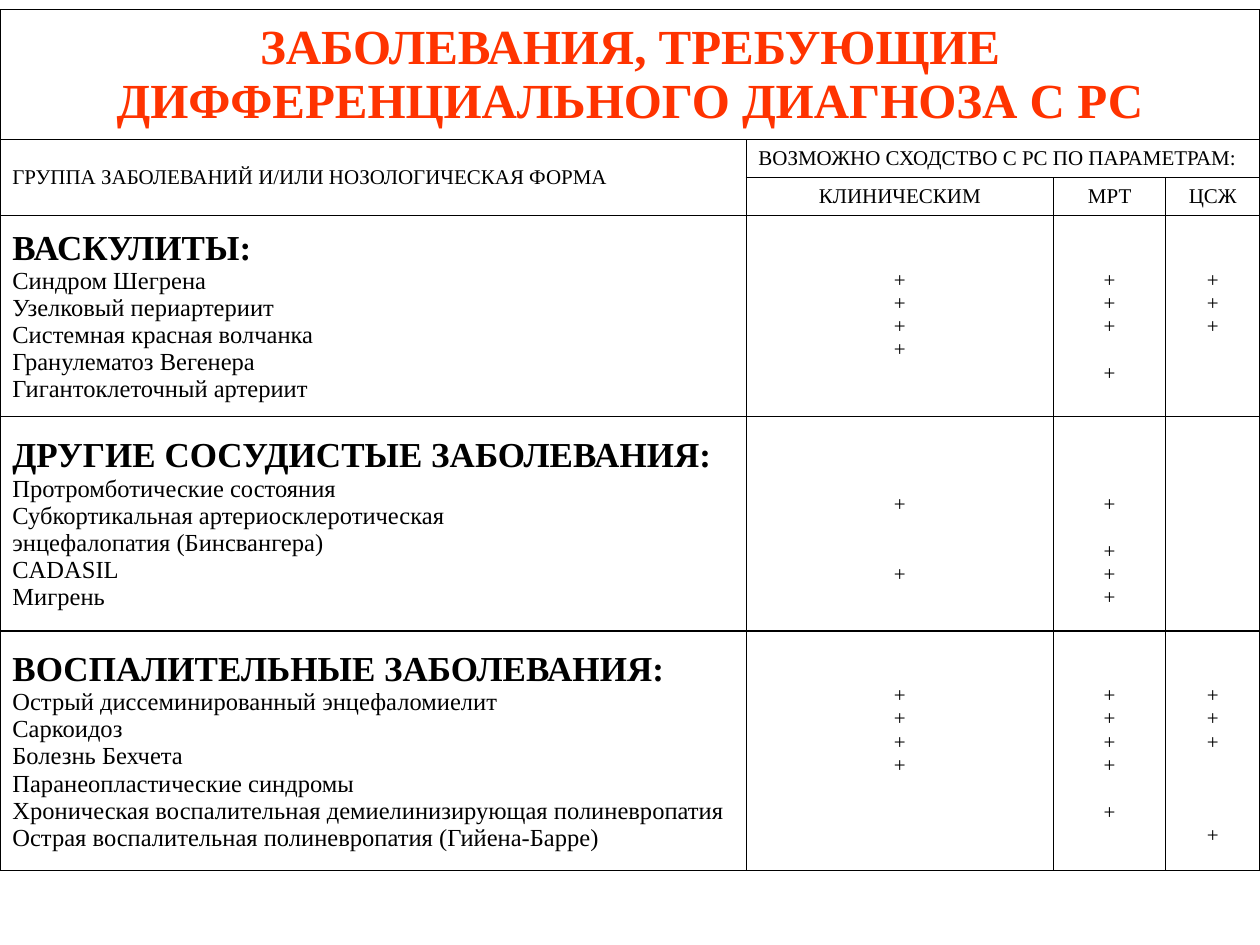
from dataclasses import dataclass

from lxml import etree
from pptx import Presentation
from pptx.dml.color import RGBColor
from pptx.enum.text import MSO_ANCHOR, PP_ALIGN
from pptx.oxml.ns import qn
from pptx.util import Cm, Pt

LEFT, CENTER = PP_ALIGN.LEFT, PP_ALIGN.CENTER
TOP, MIDDLE = MSO_ANCHOR.TOP, MSO_ANCHOR.MIDDLE


@dataclass(frozen=True)
class Theme:
    font: str = "Times New Roman"
    ink: str = "000000"
    accent: str = "FF3300"
    title: int = 28
    group: int = 20
    disease: int = 14
    small: int = 12
    border: float = 0.75
    inset_x: float = 0.25
    inset_y: float = 0.13
    mark_line: float = 0.47


THEME = Theme()
COLUMNS = [15.04, 6.2, 2.26, 1.9]
HEADER_ROWS = [2.62, 0.76, 0.76]
PARAMETERS = ["КЛИНИЧЕСКИМ", "МРТ", "ЦСЖ"]
# In each mark pattern a dot is an empty line.
GROUPS = [
    {
        "name": "ВАСКУЛИТЫ:",
        "diseases": [
            "Синдром Шегрена",
            "Узелковый периартериит",
            "Системная красная волчанка",
            "Гранулематоз Вегенера",
            "Гигантоклеточный артериит",
        ],
        "marks": ["++++", "+++.+", "+++"],
        "lead": 2,
        "height": 4.06,
    },
    {
        "name": "ДРУГИЕ СОСУДИСТЫЕ ЗАБОЛЕВАНИЯ:",
        "diseases": [
            "Протромботические состояния",
            "Субкортикальная артериосклеротическая",
            "энцефалопатия (Бинсвангера)",
            "CADASIL",
            "Мигрень",
        ],
        "marks": ["+..+", "+.+++", ""],
        "lead": 3,
        "height": 4.32,
    },
    {
        "name": "ВОСПАЛИТЕЛЬНЫЕ ЗАБОЛЕВАНИЯ:",
        "diseases": [
            "Острый диссеминированный энцефаломиелит",
            "Саркоидоз",
            "Болезнь Бехчета",
            "Паранеопластические синдромы",
            "Хроническая воспалительная демиелинизирующая полиневропатия",
            "Острая воспалительная полиневропатия (Гийена-Барре)",
        ],
        "marks": ["++++", "++++.+", "+++...+"],
        "lead": 2,
        "height": 4.83,
    },
]


def write(cell, text, size=THEME.small, color=THEME.ink, bold=False, align=LEFT, before=0):
    frame = cell.text_frame
    paragraph = frame.add_paragraph() if frame.text else frame.paragraphs[0]
    paragraph.alignment = align
    if before:
        paragraph.space_before = Cm(before)
    run = paragraph.add_run()
    run.text = text
    run.font.name = THEME.font
    run.font.size = Pt(size)
    run.font.bold = bold
    run.font.color.rgb = RGBColor.from_string(color)


def style_cell(cell):
    properties = cell._tc.get_or_add_tcPr()
    for side in ("lnL", "lnR", "lnT", "lnB"):
        line = etree.SubElement(properties, qn(f"a:{side}"), w=str(Pt(THEME.border)))
        fill = etree.SubElement(line, qn("a:solidFill"))
        etree.SubElement(fill, qn("a:srgbClr"), val=THEME.ink)
    cell.fill.background()
    cell.margin_left = cell.margin_right = Cm(THEME.inset_x)
    cell.margin_top = cell.margin_bottom = Cm(THEME.inset_y)
    cell.vertical_anchor = MIDDLE


def add_grid(slide, left, top, widths, heights):
    frame = slide.shapes.add_table(
        len(heights), len(widths), Cm(left), Cm(top), Cm(sum(widths)), Cm(sum(heights))
    )
    table = frame.table
    table.first_row = table.horz_banding = False
    for column, width in zip(table.columns, widths):
        column.width = Cm(width)
    for row, height in zip(table.rows, heights):
        row.height = Cm(height)
    for cell in table.iter_cells():
        style_cell(cell)
    return table


def fill_header(table):
    title, form, similarity = table.cell(0, 0), table.cell(1, 0), table.cell(1, 1)
    title.merge(table.cell(0, 3))
    form.merge(table.cell(2, 0))
    similarity.merge(table.cell(1, 3))
    write(title, "ЗАБОЛЕВАНИЯ, ТРЕБУЮЩИЕ ДИФФЕРЕНЦИАЛЬНОГО ДИАГНОЗА С РС",
          size=THEME.title, color=THEME.accent, bold=True, align=CENTER)
    write(form, "ГРУППА ЗАБОЛЕВАНИЙ И/ИЛИ НОЗОЛОГИЧЕСКАЯ ФОРМА")
    write(similarity, "ВОЗМОЖНО СХОДСТВО С PC ПО ПАРАМЕТРАМ:")
    for column, parameter in enumerate(PARAMETERS, start=1):
        write(table.cell(2, column), parameter, align=CENTER)


def fill_marks(cell, pattern, lead):
    cell.vertical_anchor = TOP
    cell.margin_top = Cm(THEME.inset_y + lead * THEME.mark_line)
    gap = 0
    for symbol in pattern:
        if symbol == "+":
            write(cell, symbol, align=CENTER, before=gap * THEME.mark_line)
            gap = 0
        else:
            gap += 1


def fill_group(table, row, group):
    diseases = table.cell(row, 0)
    write(diseases, group["name"], size=THEME.group, bold=True)
    for disease in group["diseases"]:
        write(diseases, disease, size=THEME.disease)
    for column, pattern in enumerate(group["marks"], start=1):
        fill_marks(table.cell(row, column), pattern, group["lead"])


def build_diagnosis_slide(presentation):
    slide = presentation.slides.add_slide(presentation.slide_layouts[6])
    heights = HEADER_ROWS + [group["height"] for group in GROUPS]
    table = add_grid(slide, 0, 0.2, COLUMNS, heights)
    fill_header(table)
    for row, group in enumerate(GROUPS, start=len(HEADER_ROWS)):
        fill_group(table, row, group)


def main():
    presentation = Presentation()
    presentation.slide_width, presentation.slide_height = Cm(25.4), Cm(19.05)
    build_diagnosis_slide(presentation)
    presentation.save("out.pptx")


if __name__ == "__main__":
    main()
